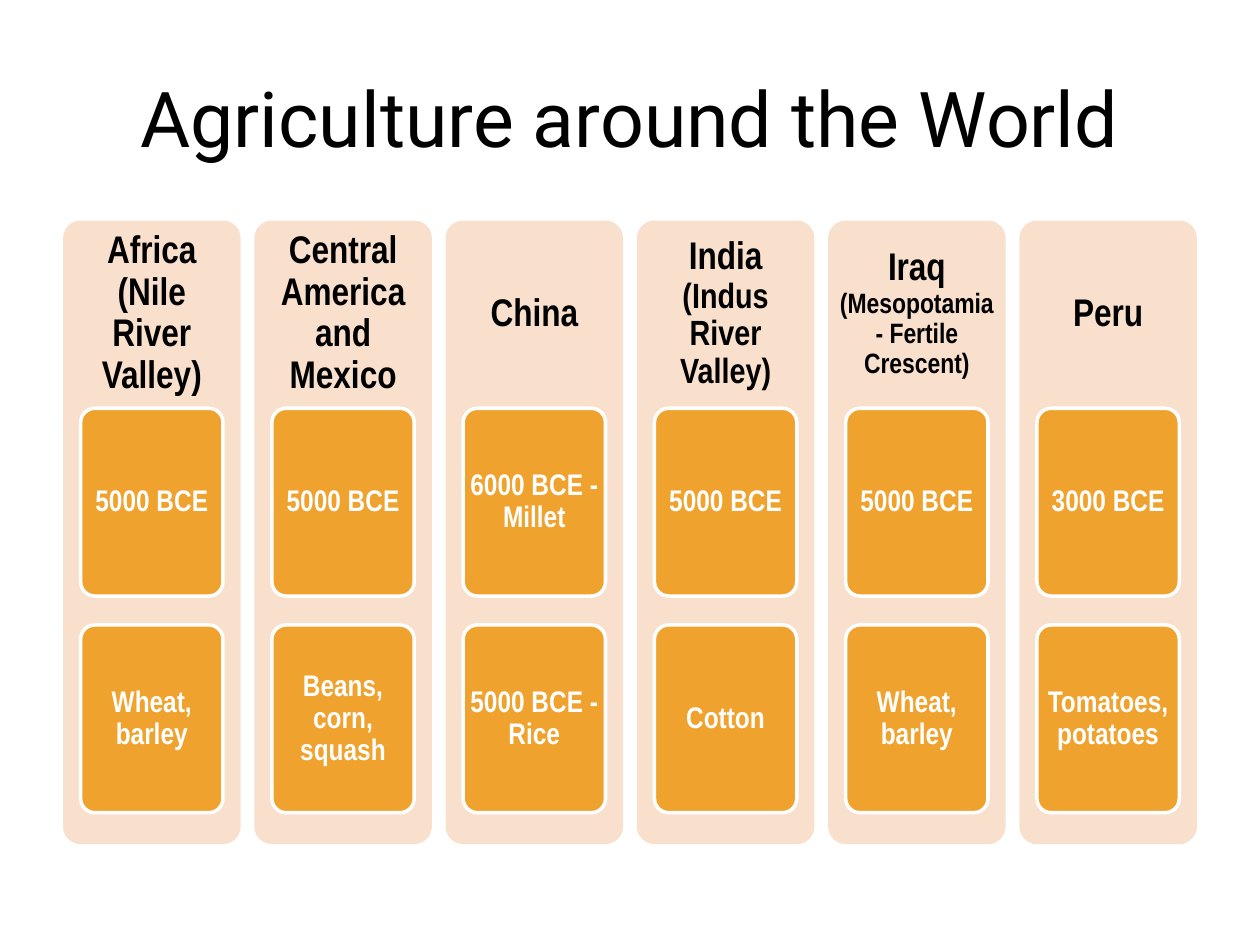
from pptx import Presentation
from pptx import util as u
from pptx.dml.color import RGBColor
from pptx.enum import shapes, text

COLORS = {"panel": "F9E0CD", "card": "F0A22E", "white": "FFFFFF", "black": "000000"}
TITLE = {"name": "Roboto", "size": u.Pt(44), "bold": False}
HEADING = {"name": "Arial Narrow", "size": u.Pt(22), "bold": True}
CARD = {"name": "Arial Narrow", "size": u.Pt(17), "bold": True}

REGIONS = [
    ([("Africa (Nile River Valley)", 22)], ["5000 BCE", "Wheat, barley"]),
    ([("Central America and Mexico", 22)], ["5000 BCE", "Beans, corn, squash"]),
    ([("China", 22)], ["6000 BCE - Millet", "5000 BCE - Rice"]),
    ([("India ", 22), ("(Indus River Valley)", 20)], ["5000 BCE", "Cotton"]),
    ([("Iraq ", 22), ("(Mesopotamia - Fertile Crescent)", 16)], ["5000 BCE", "Wheat, barley"]),
    ([("Peru", 22)], ["3000 BCE", "Tomatoes, potatoes"]),
]


class RegionSlide:
    """Draws the region columns, each a headed panel with stacked cards."""

    left, top, width, height = 0.5, 1.75, 9, 4.95
    panel_width, card_width = 1.41, 1.13
    heading_height, card_top, card_height, card_step = 1.48, 3.24, 1.49, 1.72

    def __init__(self, presentation):
        self.slide = presentation.slides.add_slide(presentation.slide_layouts[6])

    def column_left(self, column):
        step = (self.width - self.panel_width) / (len(REGIONS) - 1)
        return self.left + column * step

    def fill_text(self, shape, runs, style, color, spacing, margins):
        frame = shape.text_frame
        horizontal, vertical = (u.Inches(margin) for margin in margins)
        layout = {
            "word_wrap": True,
            "vertical_anchor": text.MSO_ANCHOR.MIDDLE,
            "margin_left": horizontal,
            "margin_right": horizontal,
            "margin_top": vertical,
            "margin_bottom": vertical,
        }
        for name, value in layout.items():
            setattr(frame, name, value)
        paragraph = frame.paragraphs[0]
        paragraph.alignment = text.PP_ALIGN.CENTER
        paragraph.line_spacing = spacing
        for words, size in runs:
            run = paragraph.add_run()
            run.text = words
            for name, value in {**style, "size": u.Pt(size)}.items():
                setattr(run.font, name, value)
            run.font.color.rgb = RGBColor.from_string(COLORS[color])

    def text_box(self, box, runs, style, spacing, margins):
        shape = self.slide.shapes.add_textbox(*map(u.Inches, box))
        self.fill_text(shape, runs, style, "black", spacing, margins)

    def rounded(self, box, fill):
        shape = self.slide.shapes.add_shape(
            shapes.MSO_SHAPE.ROUNDED_RECTANGLE, *map(u.Inches, box))
        shape.adjustments[0] = 0.1
        shape.shadow.inherit = False
        shape.fill.solid()
        shape.fill.fore_color.rgb = RGBColor.from_string(COLORS[fill])
        shape.line.fill.background()
        return shape

    def title(self, words):
        box = (self.left, 0.3, self.width, 1.25)
        self.text_box(box, [(words, TITLE["size"].pt)], TITLE, 1.0, (0.1, 0.05))

    def panel(self, column, heading):
        left = self.column_left(column)
        self.rounded((left, self.top, self.panel_width, self.height), "panel")
        box = (left, self.top, self.panel_width, self.heading_height)
        self.text_box(box, heading, HEADING, 0.9, (0.09, 0.09))

    def card(self, column, row, words):
        left = self.column_left(column) + (self.panel_width - self.card_width) / 2
        top = self.card_top + row * self.card_step
        shape = self.rounded((left, top, self.card_width, self.card_height), "card")
        shape.line.color.rgb = RGBColor.from_string(COLORS["white"])
        shape.line.width = u.Pt(2)
        self.fill_text(shape, [(words, CARD["size"].pt)], CARD, "white", 0.9, (0.01, 0.01))


def main():
    presentation = Presentation()
    presentation.slide_width = u.Inches(10)
    presentation.slide_height = u.Inches(7.5)
    slide = RegionSlide(presentation)
    slide.title("Agriculture around the World")
    for column, (heading, cards) in enumerate(REGIONS):
        slide.panel(column, heading)
        for row, words in enumerate(cards):
            slide.card(column, row, words)
    presentation.save("out.pptx")


if __name__ == "__main__":
    main()
